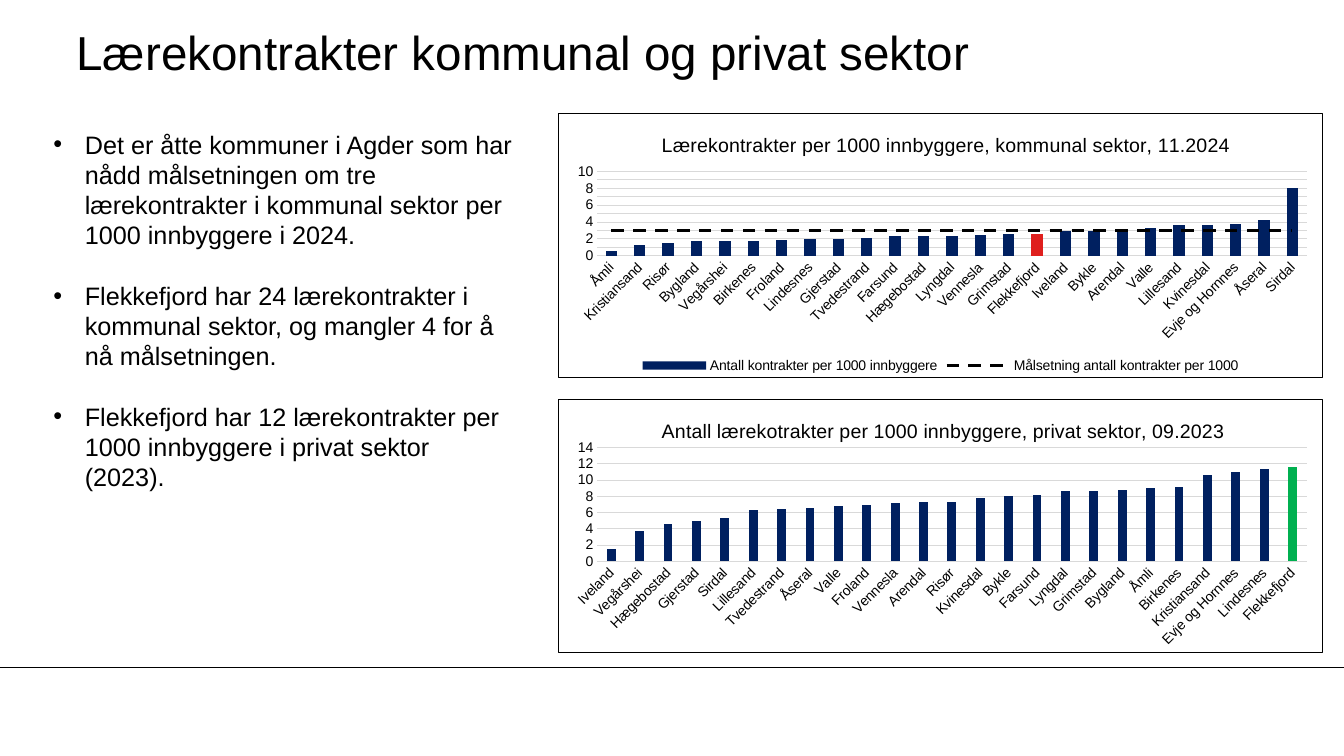
from lxml import etree
from pptx import Presentation
from pptx import oxml
from pptx.chart import data as cd
from pptx.dml import color
from pptx.enum import chart as ch, dml, shapes, text
from pptx.oxml import ns
from pptx.util import Pt

BLACK, NAVY, GREY = "000000", "002060", "D9D9D9"


def rgb(hue):
    return color.RGBColor.from_string(hue)


def put(obj, **vals):
    for key, val in vals.items():
        setattr(obj, key, val)


def node(xml):
    return oxml.parse_xml(xml.replace(">", " " + ns.nsdecls("c", "a") + ">", 1))


class Deck:
    """Holds the style and the current slide, and adds each kind of element."""

    face = "Arial"

    def __init__(self, wide, high):
        self.prs = Presentation()
        put(self.prs, slide_width=Pt(wide), slide_height=Pt(high))
        self.page = self.prs.slides.add_slide(self.prs.slide_layouts[6])

    def font(self, font, size):
        put(font, name=self.face, size=Pt(size), bold=False)
        font.color.rgb = rgb(BLACK)

    def stroke(self, line, hue, width):
        line.color.rgb = rgb(hue)
        line.width = Pt(width)

    def rule(self, x, y, end):
        line = self.page.shapes.add_connector(
            shapes.MSO_CONNECTOR.STRAIGHT, Pt(x), Pt(y), Pt(end), Pt(y))
        self.stroke(line.line, BLACK, 0.75)
        etree.SubElement(line._element.spPr, ns.qn("a:effectLst"))

    def frame(self, box, **fmt):
        shape = self.page.shapes.add_textbox(*map(Pt, box))
        put(shape.text_frame, word_wrap=True, **fmt)
        return shape.text_frame

    def title(self, box, words, size):
        frame = self.frame(box, margin_left=0, margin_right=0, margin_top=0,
                           margin_bottom=0, vertical_anchor=text.MSO_ANCHOR.MIDDLE)
        para = frame.paragraphs[0]
        para.text = words
        self.font(para.font, size)

    def bullets(self, box, items, size, pitch, indent):
        frame = self.frame(box)
        for i, words in enumerate(items):
            para = frame.add_paragraph() if i else frame.paragraphs[0]
            para.text = words
            put(para, line_spacing=Pt(pitch), space_before=Pt(pitch if i else 0))
            props = para._p.get_or_add_pPr()
            props.set("marL", str(Pt(indent)))
            props.set("indent", str(-Pt(indent)))
            etree.SubElement(props, ns.qn("a:buFont")).set("typeface", self.face)
            etree.SubElement(props, ns.qn("a:buChar")).set("char", "•")
            self.font(para.font, size)

    def place(self, root, spot, inner):
        for old in root.findall(ns.qn("c:layout")):
            root.remove(old)
        lay = node("<c:layout><c:manualLayout/></c:layout>")
        keys = ["xMode", "yMode", "x", "y", "w", "h"]
        vals = ["edge", "edge", *spot]
        if inner:
            keys, vals = ["layoutTarget", *keys], ["inner", *vals]
        for key, val in zip(keys, vals):
            etree.SubElement(lay[0], ns.qn("c:" + key)).set("val", str(val))
        root.insert(0 if inner else 1, lay)

    def columns(self, box, head, spot, area, rows, series, mark, gap, lap, top, unit):
        info = cd.CategoryChartData()
        info.categories = [name for name, _ in rows]
        for name, vals in series:
            info.add_series(name, vals)
        chart = self.page.shapes.add_chart(
            ch.XL_CHART_TYPE.COLUMN_CLUSTERED, *map(Pt, box), info).chart
        self.font(chart.font, 10)
        put(chart, has_title=True, has_legend=False)
        frame = chart.chart_title.text_frame
        frame.text = head
        self.font(frame.paragraphs[0].runs[0].font, 14)
        chart.chart_title.include_in_layout = False
        space = chart._chartSpace
        self.place(space.find(".//" + ns.qn("c:title")), spot, False)
        self.place(space.find(".//" + ns.qn("c:plotArea")), area, True)
        space.find(ns.qn("c:chart")).addnext(node(
            f'<c:spPr><a:noFill/><a:ln w="{Pt(0.75)}"><a:solidFill>'
            f'<a:srgbClr val="{BLACK}"/></a:solidFill></a:ln></c:spPr>'))
        plot = chart.plots[0]
        put(plot, gap_width=gap, overlap=lap, vary_by_categories=False)
        bars = plot.series[0]
        index, hue = mark
        for item, tint in ((bars, NAVY), (bars.points[index], hue)):
            item.format.fill.solid()
            item.format.fill.fore_color.rgb = rgb(tint)
        self.axes(chart, top, unit)
        return chart

    def axes(self, chart, top, unit):
        cat, val = chart.category_axis, chart.value_axis
        for axis in (cat, val):
            put(axis, major_tick_mark=ch.XL_TICK_MARK.NONE,
                minor_tick_mark=ch.XL_TICK_MARK.NONE)
            self.font(axis.tick_labels.font, 10)
        self.stroke(cat.format.line, GREY, 0.75)
        cat._element.find(".//" + ns.qn("a:bodyPr")).set("rot", "-2700000")
        put(val, minimum_scale=0, maximum_scale=top, major_unit=unit,
            has_major_gridlines=True)
        put(val.tick_labels, number_format="0", number_format_is_linked=False)
        val.format.line.fill.background()
        self.stroke(val.major_gridlines.format.line, GREY, 0.75)

    def target(self, chart):
        bars = chart._chartSpace.find(".//" + ns.qn("c:barChart"))
        goal = bars.findall(ns.qn("c:ser"))[1]
        for flag in goal.findall(ns.qn("c:invertIfNegative")):
            goal.remove(flag)
        lines = node('<c:lineChart><c:grouping val="standard"/>'
                     '<c:varyColors val="0"/></c:lineChart>')
        lines.append(goal)
        etree.SubElement(lines, ns.qn("c:marker")).set("val", "1")
        for axis in bars.findall(ns.qn("c:axId")):
            etree.SubElement(lines, axis.tag).set("val", axis.get("val"))
        bars.addnext(lines)
        item = chart.plots[1].series[0]
        item.smooth = False
        item.marker.style = ch.XL_MARKER_STYLE.NONE
        self.stroke(item.format.line, BLACK, 2.25)
        item.format.line.dash_style = dml.MSO_LINE.DASH

    def legend(self, chart):
        chart.has_legend = True
        put(chart.legend, position=ch.XL_LEGEND_POSITION.BOTTOM, include_in_layout=False)
        self.font(chart.legend.font, 10)


PRIVATE = [
    ("Iveland", 1.5), ("Vegårshei", 3.7), ("Hægebostad", 4.6), ("Gjerstad", 5),
    ("Sirdal", 5.4), ("Lillesand", 6.3), ("Tvedestrand", 6.5), ("Åseral", 6.6),
    ("Valle", 6.8), ("Froland", 7), ("Vennesla", 7.2), ("Arendal", 7.3),
    ("Risør", 7.3), ("Kvinesdal", 7.8), ("Bykle", 8), ("Farsund", 8.2),
    ("Lyngdal", 8.7), ("Grimstad", 8.7), ("Bygland", 8.8), ("Åmli", 9),
    ("Birkenes", 9.1), ("Kristiansand", 10.6), ("Evje og Hornnes", 11),
    ("Lindesnes", 11.4), ("Flekkefjord", 11.6)]
PUBLIC = [
    ("Åmli", 0.6), ("Kristiansand", 1.3), ("Risør", 1.5), ("Bygland", 1.8),
    ("Vegårshei", 1.8), ("Birkenes", 1.8), ("Froland", 1.9), ("Lindesnes", 2),
    ("Gjerstad", 2), ("Tvedestrand", 2.1), ("Farsund", 2.3), ("Hægebostad", 2.3),
    ("Lyngdal", 2.3), ("Vennesla", 2.5), ("Grimstad", 2.6), ("Flekkefjord", 2.6),
    ("Iveland", 2.9), ("Bykle", 3), ("Arendal", 3), ("Valle", 3.3),
    ("Lillesand", 3.6), ("Kvinesdal", 3.7), ("Evje og Hornnes", 3.8),
    ("Åseral", 4.3), ("Sirdal", 8)]


def main():
    deck = Deck(960, 540)
    deck.rule(0, 476.6, 960)
    deck.title((54.7, 9.4, 799.2, 54), "Lærekontrakter kommunal og privat sektor", 34)
    deck.bullets((31, 88.6, 342, 290.9), [
        "Det er åtte kommuner i Agder som har nådd målsetningen om tre "
        "lærekontrakter i kommunal sektor per 1000 innbyggere i 2024.",
        "Flekkefjord har 24 lærekontrakter i kommunal sektor, og mangler 4 "
        "for å nå målsetningen.",
        "Flekkefjord har 12 lærekontrakter per 1000 innbyggere i privat "
        "sektor (2023)."], 18, 21.6, 22.5)
    deck.columns(
        (398.9, 285.1, 545.8, 181.4),
        "Antall lærekotrakter per 1000 innbyggere, privat sektor, 09.2023",
        (0.13, 0.06), (0.05, 0.19, 0.93, 0.45), PRIVATE,
        [("Series 1", [val for _, val in PRIVATE])],
        (24, "00B050"), 219, -27, 14, 2)
    chart = deck.columns(
        (398.9, 80.6, 545.8, 189.4),
        "Lærekontrakter per 1000 innbyggere, kommunal sektor, 11.2024",
        (0.13, 0.06), (0.05, 0.22, 0.93, 0.32), PUBLIC,
        [("Antall kontrakter per 1000 innbyggere", [val for _, val in PUBLIC]),
         ("Målsetning antall kontrakter per 1000", [3] * len(PUBLIC))],
        (15, "DF1F1D"), 150, 0, 10, 1)
    deck.target(chart)
    deck.legend(chart)
    deck.prs.save("out.pptx")


if __name__ == "__main__":
    main()
